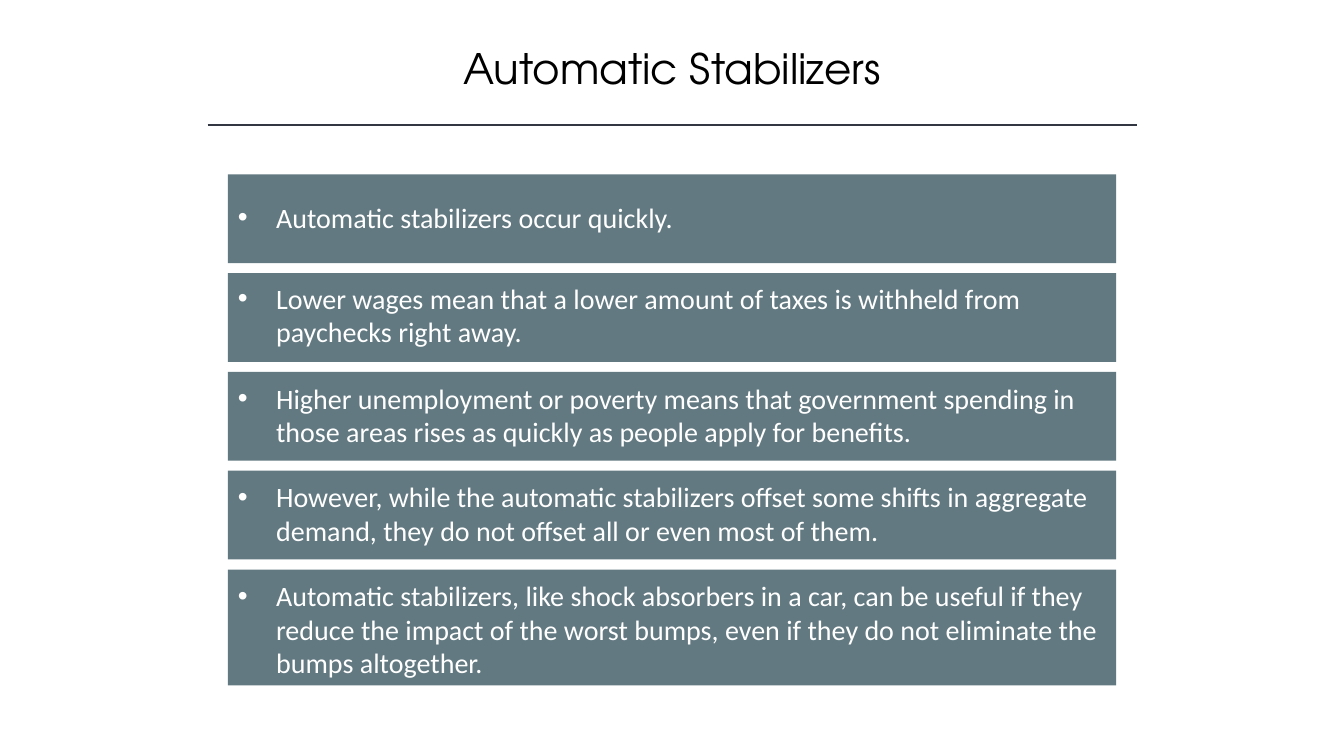
from lxml import etree
from pptx import Presentation
from pptx.dml.color import RGBColor
from pptx.enum.shapes import MSO_CONNECTOR, MSO_SHAPE
from pptx.enum.text import MSO_ANCHOR, PP_ALIGN
from pptx.oxml.ns import qn
from pptx.util import Inches, Pt

TITLE = "Automatic Stabilizers"
POINTS = [
    ("Automatic stabilizers occur quickly.", 0.88, 0.26),
    ("Lower wages mean that a lower amount of taxes is withheld from "
     "paychecks right away.", 0.88, 0.08),
    ("Higher unemployment or poverty means that government spending in "
     "those areas rises as quickly as people apply for benefits.", 0.88, 0.09),
    ("However, while the automatic stabilizers offset some shifts in aggregate "
     "demand, they do not offset all or even most of them.", 0.88, 0.09),
    ("Automatic stabilizers, like shock absorbers in a car, can be useful if they "
     "reduce the impact of the worst bumps, even if they do not eliminate the "
     "bumps altogether.", 1.15, 0.09),
]
BLACK = RGBColor(0x00, 0x00, 0x00)
WHITE = RGBColor(0xFF, 0xFF, 0xFF)
SLATE = RGBColor(0x62, 0x79, 0x81)
NAVY = RGBColor(0x32, 0x35, 0x42)
PANEL_LEFT, PANEL_TOP, PANEL_WIDTH, PANEL_PITCH = 2.26, 1.73, 8.81, 0.98
INDENT = Inches(0.38)


def add_run(para, text, font, size, color):
    """Append one formatted run to a paragraph."""
    span = para.add_run()
    span.text = text
    span.font.name = font
    span.font.size = Pt(size)
    span.font.color.rgb = color


def add_title(page):
    """Place and format the slide title."""
    title = page.shapes.title
    title.left, title.top = Inches(1.67), Inches(0.37)
    title.width, title.height = Inches(10), Inches(0.61)
    frame = title.text_frame
    frame.vertical_anchor = MSO_ANCHOR.TOP
    para = frame.paragraphs[0]
    para.alignment = PP_ALIGN.CENTER
    para.line_spacing = 1.0
    add_run(para, TITLE, "TeX Gyre Adventor", 30, BLACK)


def add_rule(page):
    """Draw the line under the title."""
    rule = page.shapes.add_connector(
        MSO_CONNECTOR.STRAIGHT, Inches(2.06), Inches(1.24), Inches(11.28), Inches(1.24))
    rule.line.color.rgb = NAVY
    rule.line.width = Pt(1)
    etree.SubElement(rule._element.spPr, qn("a:effectLst"))


def add_panel(page, top, text, height, inset):
    """Draw one panel with its bulleted point."""
    panel = page.shapes.add_shape(
        MSO_SHAPE.RECTANGLE, Inches(PANEL_LEFT), Inches(top),
        Inches(PANEL_WIDTH), Inches(height))
    panel.shadow.inherit = False
    panel.fill.solid()
    panel.fill.fore_color.rgb = SLATE
    panel.line.fill.background()
    frame = panel.text_frame
    frame.word_wrap = True
    frame.vertical_anchor = MSO_ANCHOR.TOP
    frame.margin_top = Inches(inset)
    para = frame.paragraphs[0]
    para.alignment = PP_ALIGN.LEFT
    props = para._p.get_or_add_pPr()
    props.set("marL", str(INDENT))
    props.set("indent", str(-INDENT))
    etree.SubElement(props, qn("a:buFont"), typeface="Arial")
    etree.SubElement(props, qn("a:buChar"), char="•")
    add_run(para, text, "Calibri", 20, WHITE)


def main():
    """Build the slide and save the deck."""
    deck = Presentation()
    deck.slide_width, deck.slide_height = Inches(13.33), Inches(7.5)
    page = deck.slides.add_slide(deck.slide_layouts[5])
    add_title(page)
    add_rule(page)
    for row, (text, height, inset) in enumerate(POINTS):
        add_panel(page, PANEL_TOP + row * PANEL_PITCH, text, height, inset)
    deck.save("out.pptx")


if __name__ == "__main__":
    main()
